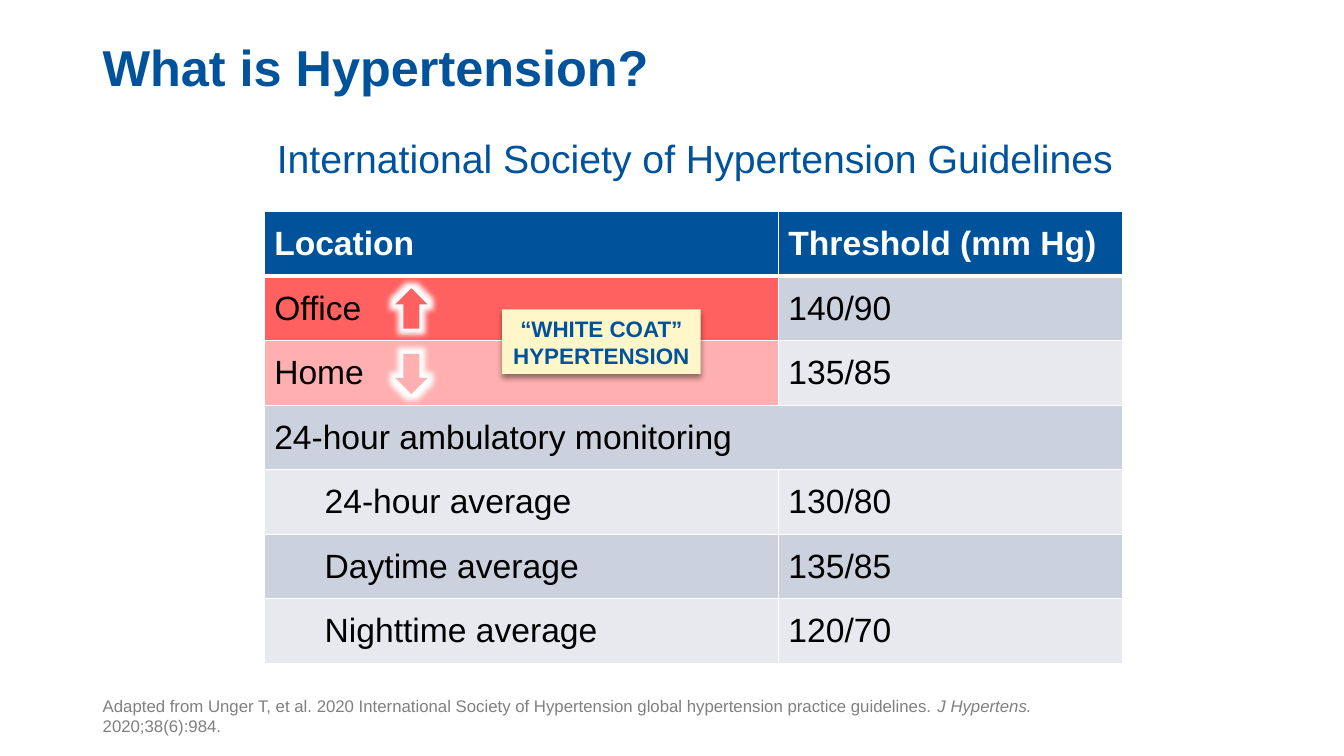
from lxml import etree
from pptx import Presentation
from pptx.dml.color import RGBColor
from pptx.enum.shapes import MSO_SHAPE
from pptx.enum.text import MSO_ANCHOR, PP_ALIGN
from pptx.oxml import parse_xml
from pptx.oxml.ns import nsdecls, qn
from pptx.util import Inches, Pt

BLUE = RGBColor(0x00, 0x53, 0x9B)
WHITE = RGBColor(0xFF, 0xFF, 0xFF)
BLACK = RGBColor(0x00, 0x00, 0x00)
GRAY = RGBColor(0x80, 0x80, 0x80)
RED = RGBColor(0xFF, 0x61, 0x61)
PINK = RGBColor(0xFF, 0xAF, 0xAF)
CREAM = RGBColor(0xFF, 0xF7, 0xC9)
BANDS = [RGBColor(0xE7, 0xE9, 0xEF), RGBColor(0xCC, 0xD1, 0xDE)]


def style_text(frame, size, color, bold=False, align=PP_ALIGN.LEFT):
    for para in frame.paragraphs:
        para.alignment = align
        for span in para.runs:
            span.font.name = "Arial"
            span.font.size = Pt(size)
            span.font.bold = bold
            span.font.color.rgb = color


def add_effect(shape, effect):
    shape.shadow.inherit = False
    effects = shape._element.spPr.find(qn("a:effectLst"))
    effects.append(parse_xml(effect))


deck = Presentation()
deck.slide_width, deck.slide_height = Inches(13.33), Inches(7.5)
page = deck.slides.add_slide(deck.slide_layouts[6])

# Title, subtitle and citation
texts = [
    ("What is Hypertension?", (0.92, 0.15, 11.5, 0.87),
     36, BLUE, True, PP_ALIGN.LEFT, MSO_ANCHOR.BOTTOM),
    ("International Society of Hypertension Guidelines", (1.67, 1.28, 10.44, 0.57),
     28, BLUE, False, PP_ALIGN.CENTER, MSO_ANCHOR.TOP),
    ("", (0.92, 6.95, 10.21, 0.4),
     12, GRAY, False, PP_ALIGN.LEFT, MSO_ANCHOR.BOTTOM),
]
for words, place, size, color, bold, align, anchor in texts:
    box = page.shapes.add_textbox(*map(Inches, place))
    frame = box.text_frame
    frame.word_wrap = True
    frame.vertical_anchor = anchor
    if words:
        frame.text = words
    else:
        citation = [
            ("Adapted from Unger T, et al. 2020 International Society of "
             "Hypertension global hypertension practice guidelines. ", False),
            ("J Hypertens. ", True),
            ("2020;38(6):984.", False),
        ]
        for part, italic in citation:
            span = frame.paragraphs[0].add_run()
            span.text = part
            span.font.italic = italic
    style_text(frame, size, color, bold, align)
    if size == 36:
        frame.paragraphs[0].line_spacing = 0.9

# Threshold table: location, threshold, indented
rows = [
    ("Location", "Threshold (mm Hg)", False),
    ("Office", "140/90", False),
    ("Home", "135/85", False),
    ("24-hour ambulatory monitoring", "", False),
    ("24-hour average", "130/80", True),
    ("Daytime average", "135/85", True),
    ("Nighttime average", "120/70", True),
]
location_fills = {1: RED, 2: PINK}
table = page.shapes.add_table(
    len(rows), 2, Inches(2.62), Inches(2.1), Inches(8.51), Inches(4.48)).table
table.columns[0].width = Inches(5.1)
table.columns[1].width = Inches(3.41)
for r, (location, threshold, indented) in enumerate(rows):
    table.rows[r].height = Inches(0.64)
    for c, words in enumerate((location, threshold)):
        cell = table.cell(r, c)
        cell.text = words
        cell.vertical_anchor = MSO_ANCHOR.MIDDLE
        style_text(cell.text_frame, 24, BLACK if r else WHITE, r == 0)
        if indented and c == 0:
            para = cell.text_frame.paragraphs[0]
            para.level = 1
            para._p.get_or_add_pPr().set("marL", str(Inches(0.5)))
        # White cell borders, thicker under the header
        thick_side = {0: "lnB", 1: "lnT"}.get(r)
        for side in ("lnL", "lnR", "lnT", "lnB"):
            width = Pt(3 if side == thick_side else 1)
            line = etree.SubElement(cell._tc.get_or_add_tcPr(), qn(f"a:{side}"), w=str(width))
            paint = etree.SubElement(line, qn("a:solidFill"))
            etree.SubElement(paint, qn("a:srgbClr"), val=str(WHITE))
        cell.fill.solid()
        band = BANDS[r % 2] if r else BLUE
        cell.fill.fore_color.rgb = location_fills.get(r, band) if c == 0 else band
table.cell(3, 0).merge(table.cell(3, 1))

# Glowing arrows: office up, home down
for top, turn, color in ((2.86, 180, RED), (3.51, 0, PINK)):
    arrow = page.shapes.add_shape(
        MSO_SHAPE.DOWN_ARROW, Inches(3.92), Inches(top), Inches(0.32), Inches(0.4))
    arrow.rotation = turn
    arrow.fill.solid()
    arrow.fill.fore_color.rgb = color
    arrow.line.fill.background()
    add_effect(arrow, f'<a:glow {nsdecls("a")} rad="{Pt(8)}"><a:srgbClr val="{WHITE}"/></a:glow>')

# White coat callout
callout = page.shapes.add_shape(
    MSO_SHAPE.RECTANGLE, Inches(4.98), Inches(3.07), Inches(1.97), Inches(0.64))
callout.fill.solid()
callout.fill.fore_color.rgb = CREAM
callout.line.fill.background()
add_effect(callout, f'<a:outerShdw {nsdecls("a")} blurRad="{Pt(4)}" dist="{Pt(3)}" dir="5400000">'
                    f'<a:srgbClr val="{BLACK}"><a:alpha val="40000"/></a:srgbClr></a:outerShdw>')
callout.text_frame.word_wrap = False
callout.text_frame.text = "“WHITE COAT”\nHYPERTENSION"
style_text(callout.text_frame, 16, BLUE, True, PP_ALIGN.CENTER)

deck.save("out.pptx")
